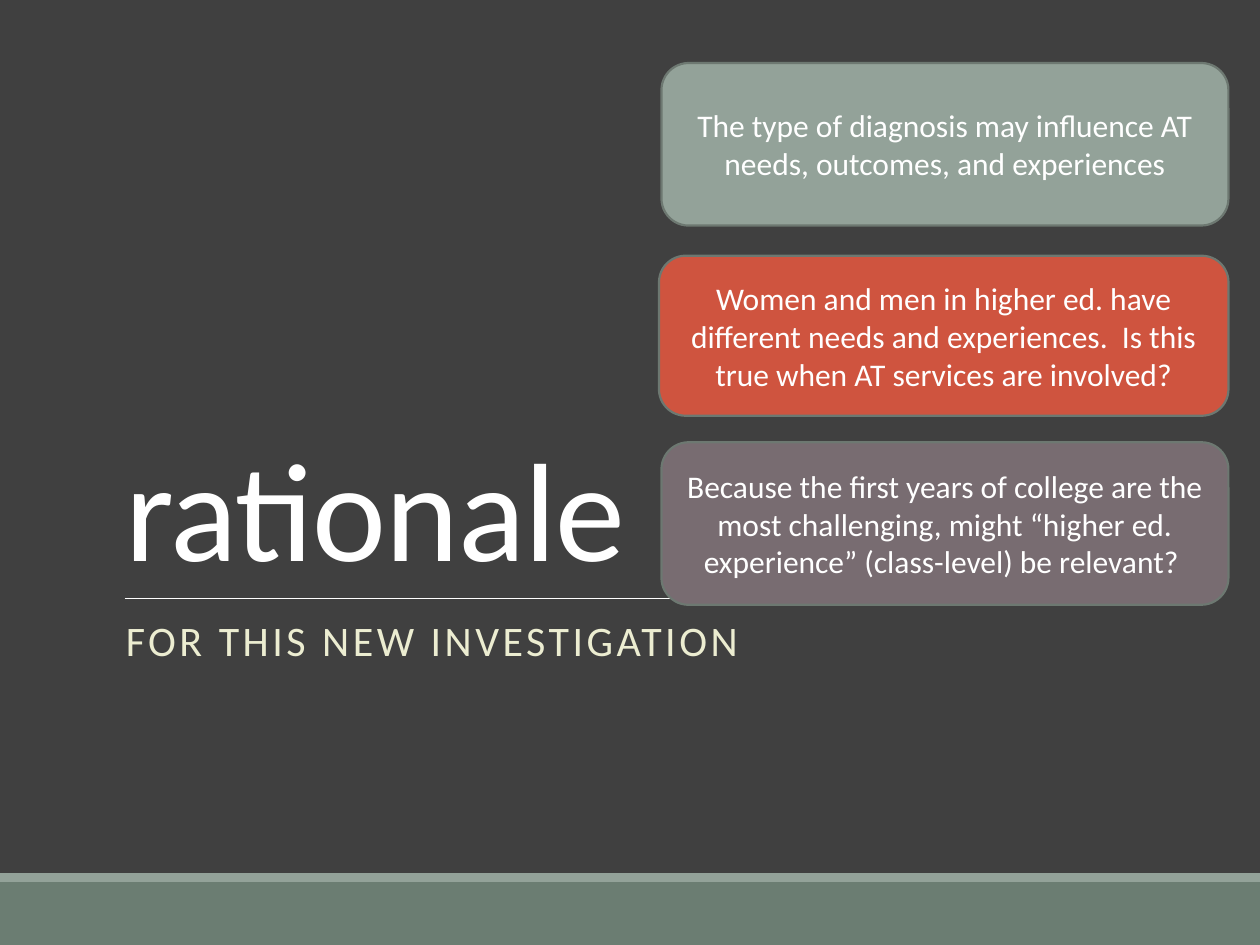
from lxml import etree
from pptx import Presentation, util as u
from pptx.dml.color import RGBColor
from pptx.enum import shapes, text
from pptx.oxml.ns import qn

WHITE = "FFFFFF"


def paint(fmt, hue):
    """Give a fill a solid colour."""
    fmt.solid()
    fmt.fore_color.rgb = RGBColor.from_string(hue)


class Deck:
    font = "Calibri"
    edge = "6D7871"

    def __init__(self, wide, high, back):
        self.prs = Presentation()
        self.prs.slide_width = u.Inches(wide)
        self.prs.slide_height = u.Inches(high)
        self.slide = self.prs.slides.add_slide(self.prs.slide_layouts[6])
        paint(self.slide.background.fill, back)

    def run(self, para, words, size, hue=WHITE, track=0):
        run = para.add_run()
        run.text = words
        run.font.name = self.font
        run.font.size = u.Pt(size)
        paint(run.font.fill, hue)
        if track:  # letter spacing in points
            run._r.get_or_add_rPr().set("spc", str(int(track * 100)))

    def shape(self, kind, box, hue):
        item = self.slide.shapes.add_shape(kind, *map(u.Inches, box))
        item.shadow.inherit = False
        paint(item.fill, hue)
        item.line.fill.background()
        return item

    def band(self, box, hue):
        self.shape(shapes.MSO_SHAPE.RECTANGLE, box, hue)

    def card(self, box, hue, words):
        item = self.shape(shapes.MSO_SHAPE.ROUNDED_RECTANGLE, box, hue)
        paint(item.line.fill, self.edge)
        item.line.width = u.Pt(1.25)
        frame = item.text_frame
        frame.word_wrap = True
        frame.vertical_anchor = text.MSO_ANCHOR.MIDDLE
        para = frame.paragraphs[0]
        para.alignment = text.PP_ALIGN.CENTER
        self.run(para, words, 18)

    def rule(self, left, right, y, hue):
        ends = map(u.Inches, (left, y, right, y))
        line = self.slide.shapes.add_connector(
            shapes.MSO_CONNECTOR.STRAIGHT, *ends)
        paint(line.line.fill, hue)
        line.line.width = u.Pt(0.5)
        etree.SubElement(line._element.spPr, qn("a:effectLst"))

    def label(self, box, words, size, hue, track, lead,
              anchor=text.MSO_ANCHOR.TOP, before=0, after=0):
        frame = self.slide.shapes.add_textbox(*map(u.Inches, box)).text_frame
        frame.word_wrap = True
        frame.vertical_anchor = anchor
        para = frame.paragraphs[0]
        para.line_spacing = lead
        para.space_before = u.Pt(before)
        para.space_after = u.Pt(after)
        self.run(para, words, size, hue, track)


def main():
    deck = Deck(10, 7.5, "404040")

    # Footer bands and title rule
    deck.band((0, 7, 10, 0.5), "6B7D72")
    deck.band((0, 6.93, 10, 0.07), "93A299")
    deck.rule(0.99, 9.09, 4.75, WHITE)

    # Title and subtitle
    deck.label((0.9, 0.83, 8.25, 3.9), "rationale", 80, WHITE, -0.5, 0.85,
               anchor=text.MSO_ANCHOR.BOTTOM)
    deck.label((0.9, 4.87, 8.25, 1.25), "FOR THIS NEW INVESTIGATION", 24,
               "ECEDD1", 2, 0.9, before=12, after=2)

    # Reason cards
    cards = [
        ((5.25, 0.5, 4.5, 1.29), "93A299",
         "The type of diagnosis may influence AT needs, outcomes, "
         "and experiences"),
        ((5.23, 2.03, 4.52, 1.27), "CF543F",
         "Women and men in higher ed. have different needs and "
         "experiences.  Is this true when AT services are involved?"),
        ((5.25, 3.51, 4.5, 1.29), "786C71",
         "Because the first years of college are the most challenging, "
         "might “higher ed. experience” (class-level) be relevant? "),
    ]
    for box, hue, words in cards:
        deck.card(box, hue, words)

    deck.prs.save("out.pptx")


if __name__ == "__main__":
    main()
